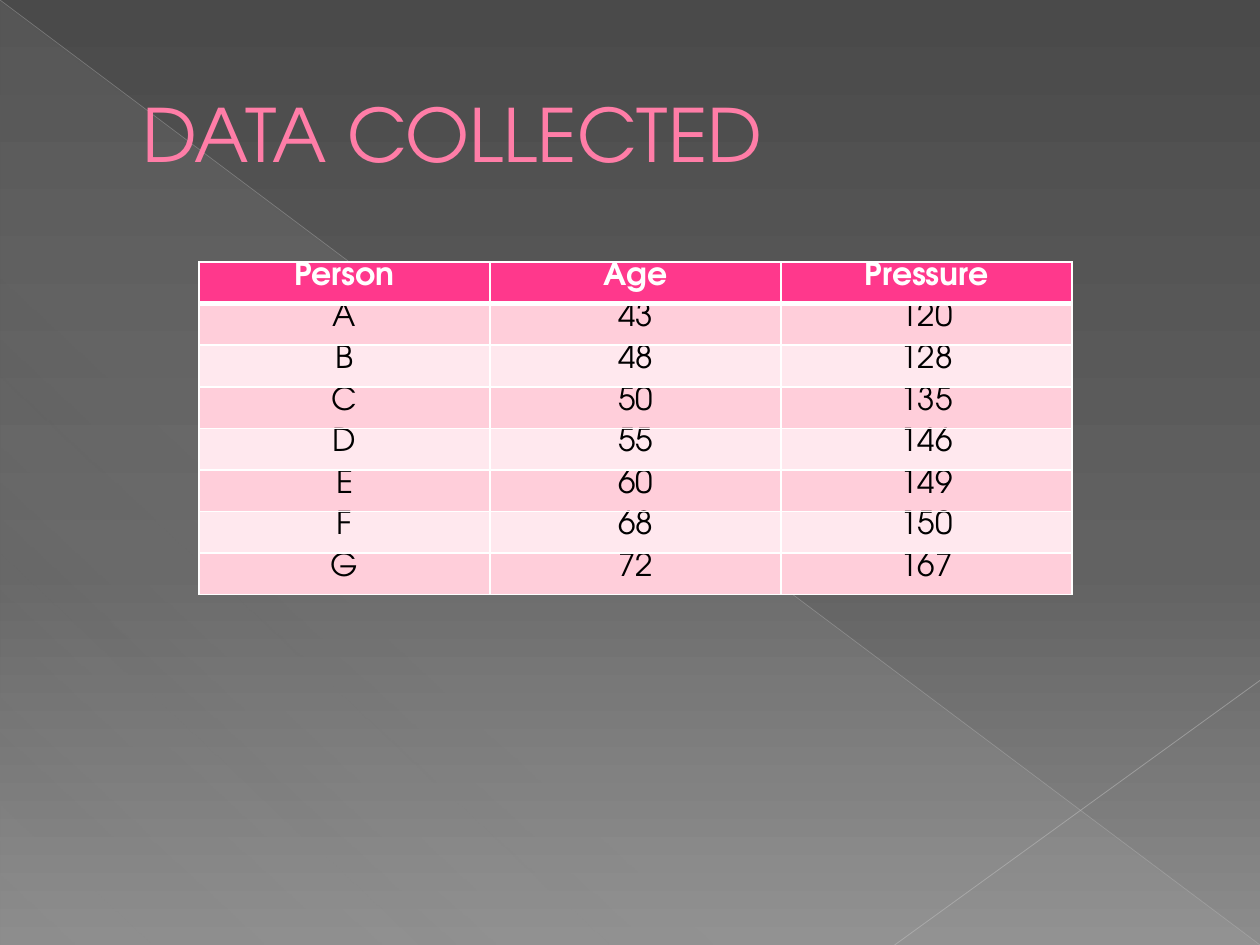
from dataclasses import dataclass
from typing import NamedTuple

from lxml.etree import SubElement
from pptx import Presentation
from pptx.dml.color import RGBColor
from pptx.enum.shapes import MSO_CONNECTOR, MSO_SHAPE
from pptx.enum.text import MSO_ANCHOR, PP_ALIGN
from pptx.oxml.ns import qn
from pptx.util import Inches, Pt


@dataclass(frozen=True)
class Theme:
    font: str = "TeX Gyre Adventor"
    title_size: int = 42
    cell_size: int = 18
    title: str = "FF7DA7"
    title_outline: str = "B12761"
    header: str = "FF388C"
    bands: tuple = ("FFCEDA", "FFE8EE")
    white: str = "FFFFFF"
    black: str = "000000"


class Stop(NamedTuple):
    position: int
    color: str
    alpha: int = 100


class Ray(NamedTuple):
    """A faint background line; its ends are shares of the slide's size."""
    start: tuple
    end: tuple
    color: str
    width: float
    alpha: int


THEME = Theme()
WIDTH, HEIGHT = Inches(10), Inches(7.5)
BACKGROUND = [Stop(0, "4A4A4A"), Stop(60, "626262"), Stop(100, "8C8C8C")]
SHEEN = [Stop(0, "D2D2D2", 10), Stop(70, "D2D2D2", 8), Stop(100, "D2D2D2", 1)]
RAYS = [
    Ray((0, 0), (1, 1), "BFBFBF", 0.39, 35),
    Ray((1, 0.72), (0.71, 1), "C6C6C6", 0.47, 45),
]
HEADINGS = ("Person", "Age", "Pressure")
READINGS = [
    ("A", 43, 120), ("B", 48, 128), ("C", 50, 135), ("D", 55, 146),
    ("E", 60, 149), ("F", 68, 150), ("G", 72, 167),
]
COLUMN, ROW = Inches(2.31), Inches(0.33)


def add_color(parent, color: str, alpha: int = 100) -> None:
    clr = SubElement(parent, qn("a:srgbClr"), val=color)
    if alpha < 100:
        SubElement(clr, qn("a:alpha"), val=str(alpha * 1000))


def add_line(parent, tag: str, color: str, width: float) -> None:
    ln = SubElement(parent, qn(tag), w=str(Pt(width)))
    add_color(SubElement(ln, qn("a:solidFill")), color)


def set_gradient(fill, props, stops: list[Stop], angle: int) -> None:
    fill.gradient()
    grad = props.find(qn("a:gradFill"))
    for child in list(grad):
        grad.remove(child)
    gs_list = SubElement(grad, qn("a:gsLst"))
    for stop in stops:
        gs = SubElement(gs_list, qn("a:gs"), pos=str(stop.position * 1000))
        add_color(gs, stop.color, stop.alpha)
    SubElement(grad, qn("a:lin"), ang=str(angle * 60000), scaled="0")


def write(tf, text, *, size: int, color: str, bold: bool = False,
          align=PP_ALIGN.LEFT):
    p = tf.paragraphs[0]
    p.alignment = align
    r = p.add_run()
    r.text = str(text)
    r.font.name, r.font.size, r.font.bold = THEME.font, Pt(size), bold
    r.font.color.rgb = RGBColor.from_string(color)
    return p, r


def add_ray(s, ray: Ray) -> None:
    (x1, y1), (x2, y2) = ray.start, ray.end
    sp = s.shapes.add_connector(
        MSO_CONNECTOR.STRAIGHT, int(WIDTH * x1), int(HEIGHT * y1),
        int(WIDTH * x2), int(HEIGHT * y2))
    sp.line.width = Pt(ray.width)
    sp.line.color.rgb = RGBColor.from_string(ray.color)
    clr = sp.line._get_or_add_ln().find(".//" + qn("a:srgbClr"))
    SubElement(clr, qn("a:alpha"), val=str(ray.alpha * 1000))
    SubElement(sp._element.spPr, qn("a:effectLst"))


def add_backdrop(s) -> None:
    fill = s.background.fill
    fill.solid()
    set_gradient(fill, s.element.find(".//" + qn("p:bgPr")), BACKGROUND, 90)
    sp = s.shapes.add_shape(MSO_SHAPE.RIGHT_TRIANGLE, 0, 0, WIDTH, HEIGHT)
    sp.shadow.inherit = False
    sp.line.fill.background()
    set_gradient(sp.fill, sp._element.spPr, SHEEN, 133)
    for ray in RAYS:
        add_ray(s, ray)


def add_title(s, text: str) -> None:
    sp = s.shapes.title
    sp.left, sp.top = int(WIDTH * 0.05), Inches(0.29)
    sp.width, sp.height = int(WIDTH * 0.9), Inches(1.53)
    tf = sp.text_frame
    tf.vertical_anchor = MSO_ANCHOR.MIDDLE
    p, r = write(tf, text, size=THEME.title_size, color=THEME.title)
    p._p.get_or_add_pPr().set("marL", str(Inches(0.53)))
    # The outline comes before the fill in the run's properties
    props = r._r.get_or_add_rPr()
    add_line(props, "a:ln", THEME.title_outline, 0.5)
    props.insert(0, props[-1])
    # Draw the title above the backdrop
    s.shapes._spTree.append(sp._element)


def format_cell(cell, text, row: int) -> None:
    header = row == 0
    cell.margin_top = cell.margin_bottom = 0
    cell.vertical_anchor = MSO_ANCHOR.TOP
    props = cell._tc.get_or_add_tcPr()
    widths = {"L": 1, "R": 1, "T": 3 if row == 1 else 1, "B": 3 if header else 1}
    for side, width in widths.items():
        add_line(props, f"a:ln{side}", THEME.white, width)
    cell.fill.solid()
    cell.fill.fore_color.rgb = RGBColor.from_string(
        THEME.header if header else THEME.bands[(row - 1) % 2])
    write(cell.text_frame, text, size=THEME.cell_size, bold=header,
          color=THEME.white if header else THEME.black, align=PP_ALIGN.CENTER)


def add_readings(s) -> None:
    rows = [HEADINGS, *READINGS]
    table = s.shapes.add_table(
        len(rows), len(HEADINGS), Inches(1.58), Inches(2.08),
        COLUMN * len(HEADINGS), ROW * len(rows)).table
    for column in table.columns:
        column.width = COLUMN
    for i, values in enumerate(rows):
        table.rows[i].height = ROW
        for j, value in enumerate(values):
            format_cell(table.cell(i, j), value, i)


def main() -> None:
    prs = Presentation()
    prs.slide_width, prs.slide_height = WIDTH, HEIGHT
    s = prs.slides.add_slide(prs.slide_layouts[5])
    add_backdrop(s)
    add_title(s, "DATA COLLECTED")
    add_readings(s)
    prs.save("out.pptx")


if __name__ == "__main__":
    main()
